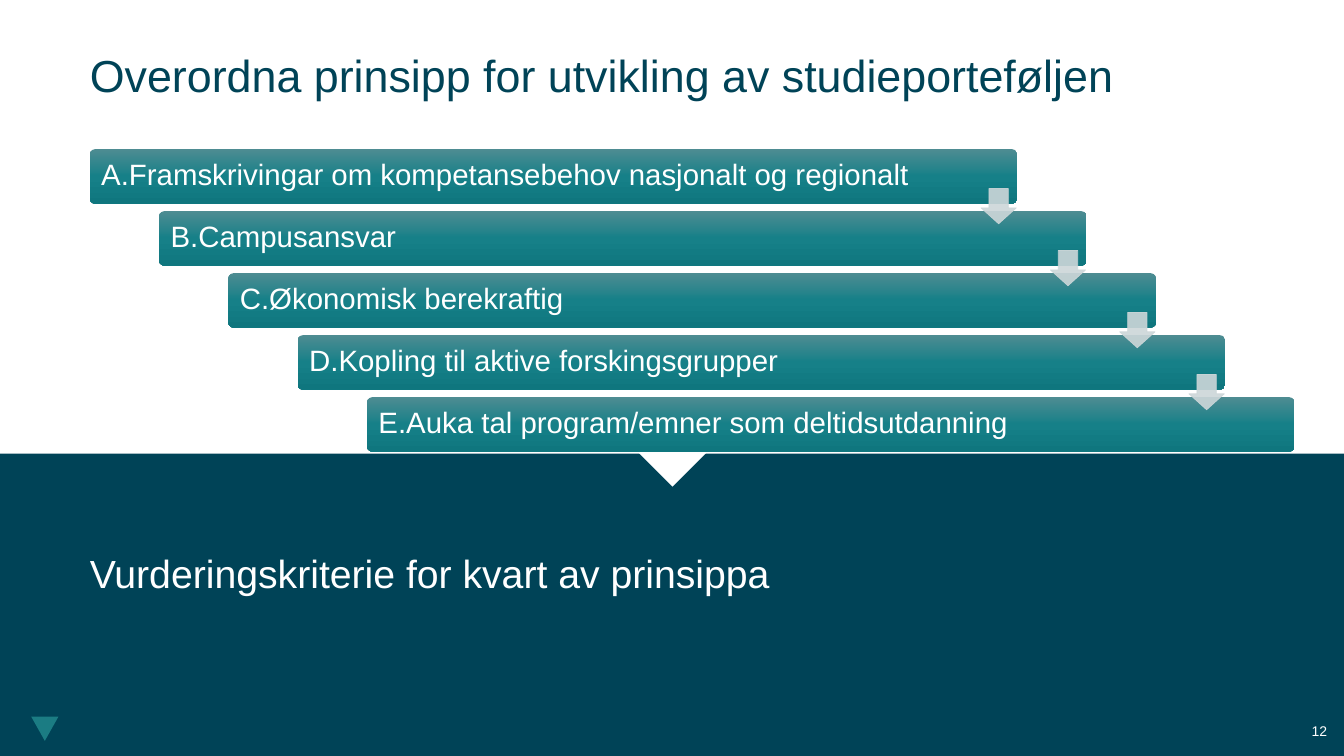
from copy import deepcopy
from dataclasses import dataclass

from pptx import Presentation
from pptx.dml.color import RGBColor
from pptx.enum.shapes import MSO_SHAPE
from pptx.enum.text import MSO_ANCHOR, PP_ALIGN
from pptx.oxml.ns import qn
from pptx.util import Inches, Pt


@dataclass(frozen=True)
class Theme:
    font: str = "Arial"
    navy: str = "004357"
    white: str = "FFFFFF"
    teal: str = "1B7C83"
    arrow: str = "CDD7D9"
    bar: tuple = ((0, "4E8C92"), (0.5, "168088"), (1, "0F767E"))
    title_size: int = 32
    body_size: int = 28
    bar_size: int = 21
    number_size: int = 10


def apply(target, values):
    for name, value in values.items():
        setattr(target, name, value)


class SlideBuilder:
    def __init__(self, page, theme):
        self.page = page
        self.theme = theme

    def fill_text(self, shape, text, size, color, inset=0, anchor=MSO_ANCHOR.MIDDLE, **spacing):
        margin = Inches(inset)
        frame = shape.text_frame
        apply(frame, {
            "word_wrap": True, "vertical_anchor": anchor,
            "margin_left": margin, "margin_right": margin,
            "margin_top": margin, "margin_bottom": margin,
        })
        para = frame.paragraphs[0]
        apply(para, {"alignment": PP_ALIGN.LEFT, **spacing})
        span = para.add_run()
        span.text = text
        apply(span.font, {"name": self.theme.font, "size": Pt(size)})
        span.font.color.rgb = RGBColor.from_string(color)

    def text(self, area, text, size, color, **layout):
        box = self.page.shapes.add_textbox(*map(Inches, area))
        self.fill_text(box, text, size, color, **layout)

    def shape(self, kind, area, color=None, rotation=0, adjustments=()):
        shape = self.page.shapes.add_shape(kind, *map(Inches, area))
        shape.shadow.inherit = False
        shape.rotation = rotation
        shape.line.fill.background()
        for index, value in enumerate(adjustments):
            shape.adjustments[index] = value
        if color:
            shape.fill.solid()
            shape.fill.fore_color.rgb = RGBColor.from_string(color)
        return shape

    def bar(self, area, text):
        bar = self.shape(MSO_SHAPE.ROUNDED_RECTANGLE, area, adjustments=(0.1,))
        bar.fill.gradient()
        bar.fill.gradient_angle = 270
        stops = next(bar._element.spPr.iter(qn("a:gsLst")))
        stops.append(deepcopy(stops[0]))
        for stop, (position, color) in zip(bar.fill.gradient_stops, self.theme.bar):
            stop.position = position
            stop.color.rgb = RGBColor.from_string(color)
        self.fill_text(bar, text, self.theme.bar_size, self.theme.white, inset=0.1, line_spacing=0.9)

    def arrow(self, area):
        arrow = self.shape(MSO_SHAPE.DOWN_ARROW, area, self.theme.arrow, adjustments=(0.55, 0.45))
        arrow.line.color.rgb = RGBColor.from_string(self.theme.arrow)
        arrow.line.width = Pt(0.5)
        for color in arrow._element.spPr.iter(qn("a:srgbClr")):
            alpha = color.makeelement(qn("a:alpha"), {"val": "90000"})
            color.append(alpha)


PRINCIPLES = (
    "A.Framskrivingar om kompetansebehov nasjonalt og regionalt",
    "B.Campusansvar",
    "C.Økonomisk berekraftig",
    "D.Kopling til aktive forskingsgrupper",
    "E.Auka tal program/emner som deltidsutdanning",
)


def main():
    deck = Presentation()
    apply(deck, {"slide_width": Inches(13.33), "slide_height": Inches(7.5)})
    theme = Theme()
    slide = SlideBuilder(deck.slides.add_slide(deck.slide_layouts[6]), theme)

    slide.shape(MSO_SHAPE.RECTANGLE, (0, 4.5, 13.33, 3), theme.navy)
    slide.shape(MSO_SHAPE.RECTANGLE, (6.41, 4.2, 0.52, 0.52), theme.white, rotation=45)
    slide.shape(MSO_SHAPE.FLOWCHART_MERGE, (0.31, 7.11, 0.27, 0.24), theme.teal)
    slide.text((0.89, 0, 11.95, 1.48), "Overordna prinsipp for utvikling av studieporteføljen",
               theme.title_size, theme.navy)
    slide.text((0.89, 5.45, 11.95, 1.06), "Vurderingskriterie for kvart av prinsippa",
               theme.body_size, theme.white, anchor=MSO_ANCHOR.TOP, space_before=Pt(10))
    slide.text((12.84, 7.01, 0.49, 0.49), "12", theme.number_size, theme.white,
               alignment=PP_ALIGN.CENTER, space_after=Pt(6))

    gaps = len(PRINCIPLES) - 1
    steps = [(2.75 * index / gaps, 2.46 * index / gaps) for index in range(len(PRINCIPLES))]
    for (right, down), principle in zip(steps, PRINCIPLES):
        slide.bar((0.89 + right, 1.48 + down, 9.2, 0.54), principle)
    for right, down in steps[:-1]:
        slide.arrow((9.73 + right, 1.87 + down, 0.35, 0.35))

    deck.save("out.pptx")


if __name__ == "__main__":
    main()
